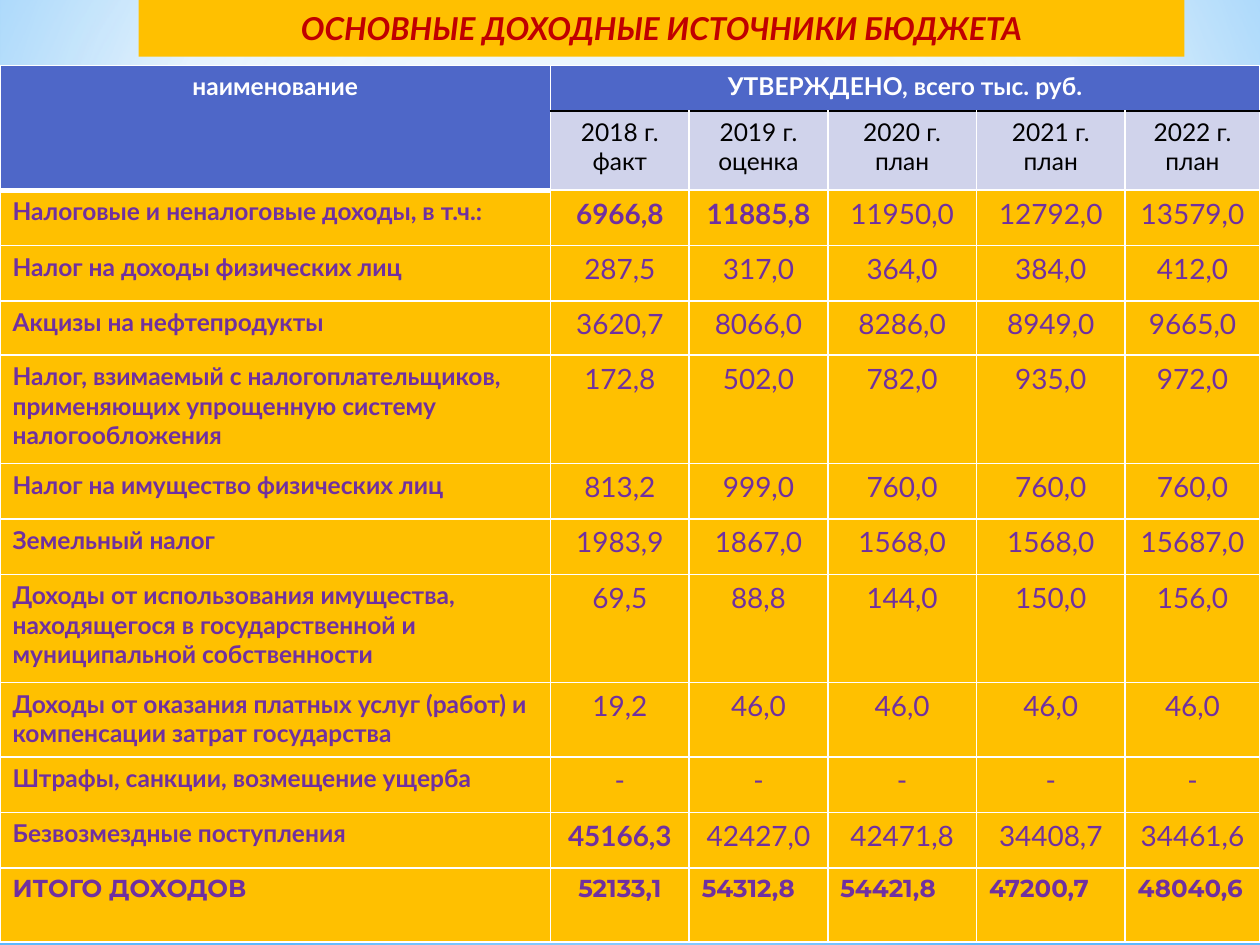
from lxml import etree
from pptx import Presentation
from pptx.dml.color import RGBColor
from pptx.enum.shapes import MSO_SHAPE
from pptx.enum.text import MSO_ANCHOR, PP_ALIGN
from pptx.oxml.ns import qn
from pptx.util import Inches, Pt

RECTANGLE = MSO_SHAPE.RECTANGLE
MIDDLE = MSO_ANCHOR.MIDDLE
LEFT, CENTER = PP_ALIGN.LEFT, PP_ALIGN.CENTER

WIDTH, HEIGHT = Inches(10), Inches(7.5)
TABLE_TOP = 0.52
COLUMNS = [4.37, 1.1, 1.1, 1.18, 1.18, 1.07]
HEADER_ROWS = [0.36, 0.63]
ONE_LINE, TWO_LINES, THREE_LINES, TOTAL = 0.44, 0.59, 0.86, 0.59
GOLD, BLUE, PALE, PURPLE = "FFC000", "4E67C8", "D0D3EB", "7030A0"
WHITE, BLACK, RED = "FFFFFF", "000000", "C00000"

HEADER_FORMAT = {"size": Pt(14), "name": "Lato", "bold": True, "italic": False}
YEAR_FORMAT = {**HEADER_FORMAT, "bold": False}
VALUE_FORMAT = {**YEAR_FORMAT, "size": Pt(16)}
TOTAL_FORMAT = {**HEADER_FORMAT, "name": "Montserrat"}
TITLE_FORMAT = {**HEADER_FORMAT, "size": Pt(18), "italic": True}

YEARS = ["2018 г. факт", "2019 г. оценка", "2020 г. план", "2021 г. план", "2022 г. план"]

# Row height, name, values by year, number of leading bold values
INCOME = [
    (ONE_LINE, "Налоговые и неналоговые доходы, в т.ч.:",
     "6966,8 11885,8 11950,0 12792,0 13579,0", 2),
    (ONE_LINE, "Налог на доходы физических лиц", "287,5 317,0 364,0 384,0 412,0", 0),
    (0.43, "Акцизы на нефтепродукты", "3620,7 8066,0 8286,0 8949,0 9665,0", 0),
    (THREE_LINES, "Налог, взимаемый с налогоплательщиков, применяющих "
     "упрощенную систему налогообложения", "172,8 502,0 782,0 935,0 972,0", 0),
    (ONE_LINE, "Налог на имущество физических лиц", "813,2 999,0 760,0 760,0 760,0", 0),
    (ONE_LINE, "Земельный налог", "1983,9 1867,0 1568,0 1568,0 15687,0", 0),
    (THREE_LINES, "Доходы от использования имущества, находящегося в "
     "государственной и муниципальной собственности", "69,5 88,8 144,0 150,0 156,0", 0),
    (TWO_LINES, "Доходы от оказания платных услуг (работ) и компенсации "
     "затрат государства", "19,2 46,0 46,0 46,0 46,0", 0),
    (ONE_LINE, "Штрафы, санкции, возмещение ущерба", "- - - - -", 0),
    (ONE_LINE, "Безвозмездные поступления", "45166,3 42427,0 42471,8 34408,7 34461,6", 1),
]
TOTAL_NAME = "ИТОГО ДОХОДОВ"
TOTAL_VALUES = "52133,1 54312,8 54421,8 47200,7 48040,6"


def color(value):
    return RGBColor.from_string(value)


def set_gradient(fill, properties, stops, focus):
    """Circular gradient; a stop is (position %, colour, opacity %)."""
    fill.solid()
    solid = properties.find(qn("a:solidFill"))
    gradient = etree.Element(qn("a:gradFill"), rotWithShape="1")
    stop_list = etree.SubElement(gradient, qn("a:gsLst"))
    for position, value, opacity in stops:
        stop = etree.SubElement(stop_list, qn("a:gs"), pos=str(position * 1000))
        stop_color = etree.SubElement(stop, qn("a:srgbClr"), val=value)
        etree.SubElement(stop_color, qn("a:alpha"), val=str(opacity * 1000))
    circle = etree.SubElement(gradient, qn("a:path"), {"path": "circle"})
    edges = {side: str(share * 1000) for side, share in zip("ltrb", focus)}
    etree.SubElement(circle, qn("a:fillToRect"), edges)
    properties.replace(solid, gradient)


def write_text(frame, text, font_format, font_color, alignment):
    paragraph = frame.paragraphs[0]
    paragraph.alignment = alignment
    run = paragraph.add_run()
    run.text = text
    for name, value in font_format.items():
        setattr(run.font, name, value)
    run.font.color.rgb = color(font_color)


def add_rectangle(slide, left, top, width, height):
    """Position and size are shares of the slide."""
    shape = slide.shapes.add_shape(RECTANGLE, int(WIDTH * left), int(HEIGHT * top),
                                   int(WIDTH * width), int(HEIGHT * height))
    shape.shadow.inherit = False
    shape.line.fill.background()
    return shape


def style_cell(cell, fill, top=WHITE, bottom=WHITE, bottom_width=1):
    properties = cell._tc.get_or_add_tcPr()
    borders = [("L", WHITE, 1), ("R", WHITE, 1), ("T", top, 1), ("B", bottom, bottom_width)]
    for side, value, width in borders:
        line = etree.SubElement(properties, qn(f"a:ln{side}"), w=str(Pt(width)))
        line_fill = etree.SubElement(line, qn("a:solidFill"))
        etree.SubElement(line_fill, qn("a:srgbClr"), val=value)
    cell.fill.solid()
    cell.fill.fore_color.rgb = color(fill)


def add_background(slide):
    background = slide.background
    background.fill.solid()
    set_gradient(background.fill, slide.element.find(".//" + qn("p:bgPr")),
                 [(0, "9ED5FF", 100), (60, WHITE, 100), (100, "5BB9FF", 100)],
                 (20, 10, 20, 60))
    glow = add_rectangle(slide, 0, 0, 1, 0.74)
    set_gradient(glow.fill, glow.element.spPr,
                 [(0, WHITE, 89), (48, WHITE, 62), (100, "B4DCFA", 79)],
                 (50, 50, 50, 50))


def add_title(slide):
    title = add_rectangle(slide, 0.11, 0, 0.83, 0.06)
    title.fill.solid()
    title.fill.fore_color.rgb = color(GOLD)
    title.text_frame.word_wrap = True
    title.text_frame.vertical_anchor = MIDDLE
    write_text(title.text_frame, "ОСНОВНЫЕ ДОХОДНЫЕ ИСТОЧНИКИ БЮДЖЕТА",
               TITLE_FORMAT, RED, CENTER)


def fill_header(table):
    for column in range(len(COLUMNS)):
        is_name = column == 0
        style_cell(table.cell(0, column), BLUE, bottom=WHITE if is_name else BLACK,
                   bottom_width=3 if is_name else 1)
        style_cell(table.cell(1, column), BLUE if is_name else PALE,
                   top=WHITE if is_name else BLACK, bottom_width=3 if is_name else 1)
    table.cell(0, 0).merge(table.cell(1, 0))
    table.cell(0, 1).merge(table.cell(0, len(YEARS)))
    for column, text in enumerate(["наименование", "УТВЕРЖДЕНО, всего тыс. руб."]):
        write_text(table.cell(0, column).text_frame, text, HEADER_FORMAT, WHITE, CENTER)
    for column, year in enumerate(YEARS, 1):
        write_text(table.cell(1, column).text_frame, year, YEAR_FORMAT, BLACK, CENTER)


def fill_row(table, row, texts, formats, alignments):
    for column, (text, font_format, alignment) in enumerate(zip(texts, formats, alignments)):
        cell = table.cell(row, column)
        style_cell(cell, GOLD)
        write_text(cell.text_frame, text, font_format, PURPLE, alignment)


def add_income_table(slide):
    heights = HEADER_ROWS + [income[0] for income in INCOME] + [TOTAL]
    table = slide.shapes.add_table(len(heights), len(COLUMNS), 0, Inches(TABLE_TOP),
                                   WIDTH, Inches(sum(heights))).table
    for column, width in zip(table.columns, COLUMNS):
        column.width = Inches(width)
    for row, height in zip(table.rows, heights):
        row.height = Inches(height)

    fill_header(table)
    years = len(YEARS)
    for row, (_, name, values, bold_count) in enumerate(INCOME, len(HEADER_ROWS)):
        formats = [{**VALUE_FORMAT, "bold": index < bold_count} for index in range(years)]
        fill_row(table, row, [name, *values.split()], [HEADER_FORMAT, *formats],
                 [LEFT] + [CENTER] * years)
    fill_row(table, len(heights) - 1, [TOTAL_NAME, *TOTAL_VALUES.split()],
             [TOTAL_FORMAT] * (years + 1), [LEFT, CENTER] + [LEFT] * (years - 1))


def main():
    presentation = Presentation()
    presentation.slide_width, presentation.slide_height = WIDTH, HEIGHT
    slide = presentation.slides.add_slide(presentation.slide_layouts[6])
    add_background(slide)
    add_title(slide)
    add_income_table(slide)
    presentation.save("out.pptx")


if __name__ == "__main__":
    main()
